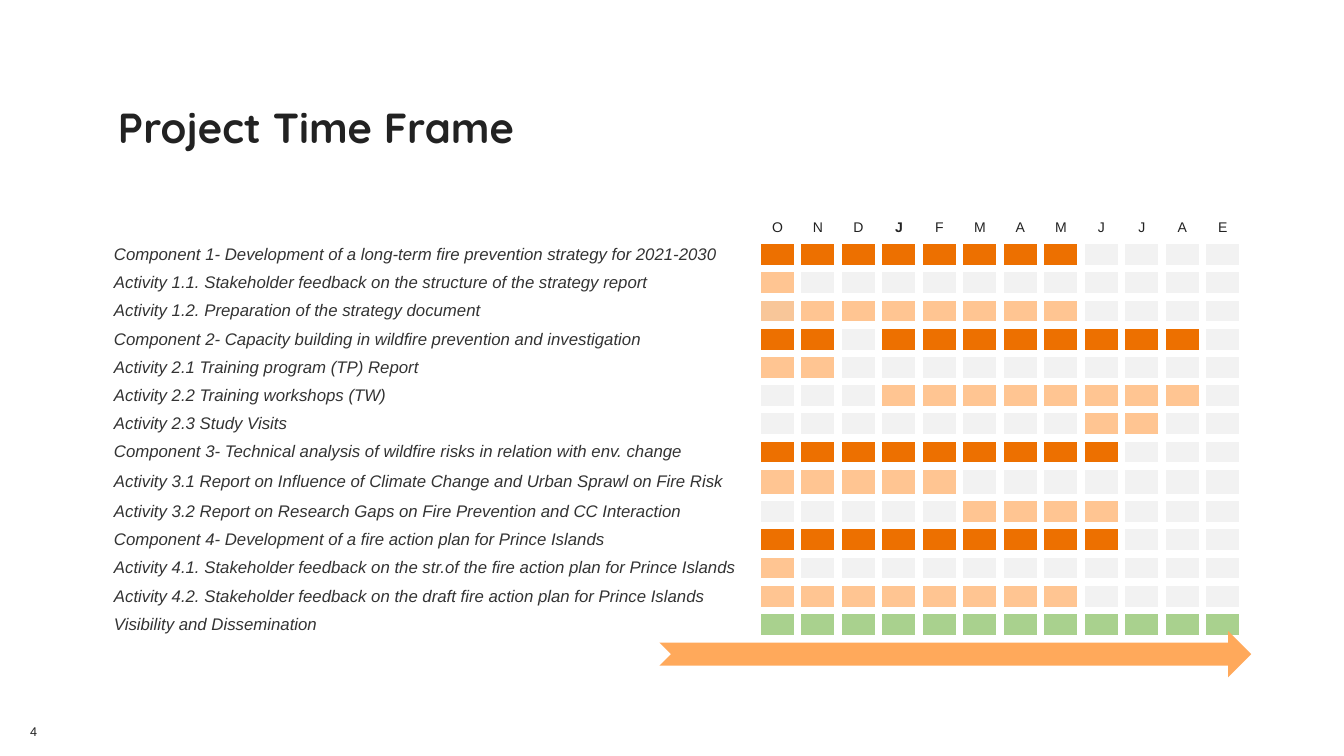
"""Build the project time frame slide: a Gantt table with a timeline arrow."""
from lxml import etree
from pptx import Presentation
from pptx import util as u
from pptx.dml.color import RGBColor
from pptx.enum import shapes, text
from pptx.oxml.ns import qn


def rgb(value):
    return RGBColor.from_string(value)


def write(tf, content, size, color="222222", align=text.PP_ALIGN.LEFT,
          anchor=text.MSO_ANCHOR.TOP, **style):
    frame = {"margin_left": 0, "margin_right": 0, "margin_top": 0,
             "margin_bottom": 0, "word_wrap": True, "vertical_anchor": anchor}
    for name, value in frame.items():
        setattr(tf, name, value)
    p = tf.paragraphs[0]
    p.alignment = align
    r = p.add_run()
    r.text = content
    font = {"name": "Arial", "size": u.Pt(size), "bold": False, **style}
    for name, value in font.items():
        setattr(r.font, name, value)
    r.font.color.rgb = rgb(color)


MONTHS = "ONDJFMAMJJAE"
FILLS = {"C": "ED7000", "A": "FFC592", "a": "F8C699", "V": "A9D18E", "-": "F2F2F2"}
TASKS = [
    ("Component 1- Development of a long-term fire prevention strategy for 2021-2030", "CCCCCCCC----"),
    ("Activity 1.1. Stakeholder feedback on the structure of the strategy report", "A-----------"),
    ("Activity 1.2. Preparation of the strategy document", "aAAAAAAA----"),
    ("Component 2- Capacity building in wildfire prevention and investigation", "CC-CCCCCCCC-"),
    ("Activity 2.1 Training program (TP) Report", "AA----------"),
    ("Activity 2.2 Training workshops (TW)", "---AAAAAAAA-"),
    ("Activity 2.3 Study Visits", "--------AA--"),
    ("Component 3- Technical analysis of wildfire risks in relation with env. change", "CCCCCCCCC---"),
    ("Activity 3.1 Report on Influence of Climate Change and Urban Sprawl on Fire Risk", "AAAAA-------"),
    ("Activity 3.2 Report on Research Gaps on Fire Prevention and CC Interaction", "-----AAAA---"),
    ("Component 4- Development of a fire action plan for Prince Islands", "CCCCCCCCC---"),
    ("Activity 4.1. Stakeholder feedback on the str.of the fire action plan for Prince Islands", "A-----------"),
    ("Activity 4.2. Stakeholder feedback on the draft fire action plan for Prince Islands", "AAAAAAAA----"),
    ("Visibility and Dissemination", "VVVVVVVVVVVV"),
]
HEIGHTS = [0.29] + [0.28] * 8 + [0.31] + [0.28] * 5

prs = Presentation()
prs.slide_width, prs.slide_height = u.Inches(13.33), u.Inches(7.5)
s = prs.slides.add_slide(prs.slide_layouts[5])

title = s.shapes.title
title.left, title.top = u.Inches(1.17), u.Inches(1.01)
title.width, title.height = u.Inches(8.94), u.Inches(0.47)
write(title.text_frame, "Project Time Frame", 30, name="Quicksand", bold=True)

table = s.shapes.add_table(
    len(TASKS) + 1, len(MONTHS) + 1, u.Inches(1), u.Inches(2.08),
    u.Inches(11.33), u.Inches(sum(HEIGHTS))).table
table.first_row = table.horz_banding = False
for i, column in enumerate(table.columns):
    column.width = u.Inches(4.82 / len(MONTHS) if i else 6.51)
for row, height in zip(table.rows, HEIGHTS):
    row.height = u.Inches(height)

for cell in table.iter_cells():
    cell.margin_left = cell.margin_right = cell.margin_top = cell.margin_bottom = 0
    tc_pr = cell._tc.get_or_add_tcPr()
    for side in ("a:lnL", "a:lnR", "a:lnT", "a:lnB"):
        ln = etree.SubElement(tc_pr, qn(side), w=str(u.Pt(6)))
        solid = etree.SubElement(ln, qn("a:solidFill"))
        etree.SubElement(solid, qn("a:srgbClr"), val="FFFFFF")
    cell.fill.background()

for col, month in enumerate(MONTHS, 1):
    cell = table.cell(0, col)
    write(cell.text_frame, month, 10, align=text.PP_ALIGN.CENTER, bold=col == 4)
    cell.vertical_anchor = text.MSO_ANCHOR.BOTTOM
    cell.margin_bottom = u.Inches(0.05)

for row, (label, bars) in enumerate(TASKS, 1):
    cell = table.cell(row, 0)
    write(cell.text_frame, label, 12, "333333", italic=True)
    cell.vertical_anchor = text.MSO_ANCHOR.MIDDLE
    cell.margin_left = u.Inches(0.13)
    for col, key in enumerate(bars, 1):
        cell = table.cell(row, col)
        cell.fill.solid()
        cell.fill.fore_color.rgb = rgb(FILLS[key])
        p = cell.text_frame.paragraphs[0]
        etree.SubElement(p._p, qn("a:endParaRPr"), sz="1000")

number = s.shapes.add_textbox(u.Inches(0.17), u.Inches(7), u.Inches(0.33), u.Inches(0.33))
write(number.text_frame, "4", 9, align=text.PP_ALIGN.CENTER, anchor=text.MSO_ANCHOR.BOTTOM)

arrow = s.shapes.add_shape(
    shapes.MSO_SHAPE.NOTCHED_RIGHT_ARROW,
    u.Inches(6.54), u.Inches(6.26), u.Inches(5.87), u.Inches(0.46))
arrow.shadow.inherit = False
arrow.fill.solid()
arrow.fill.fore_color.rgb = rgb("FFA95B")
arrow.line.fill.background()

prs.save("out.pptx")
